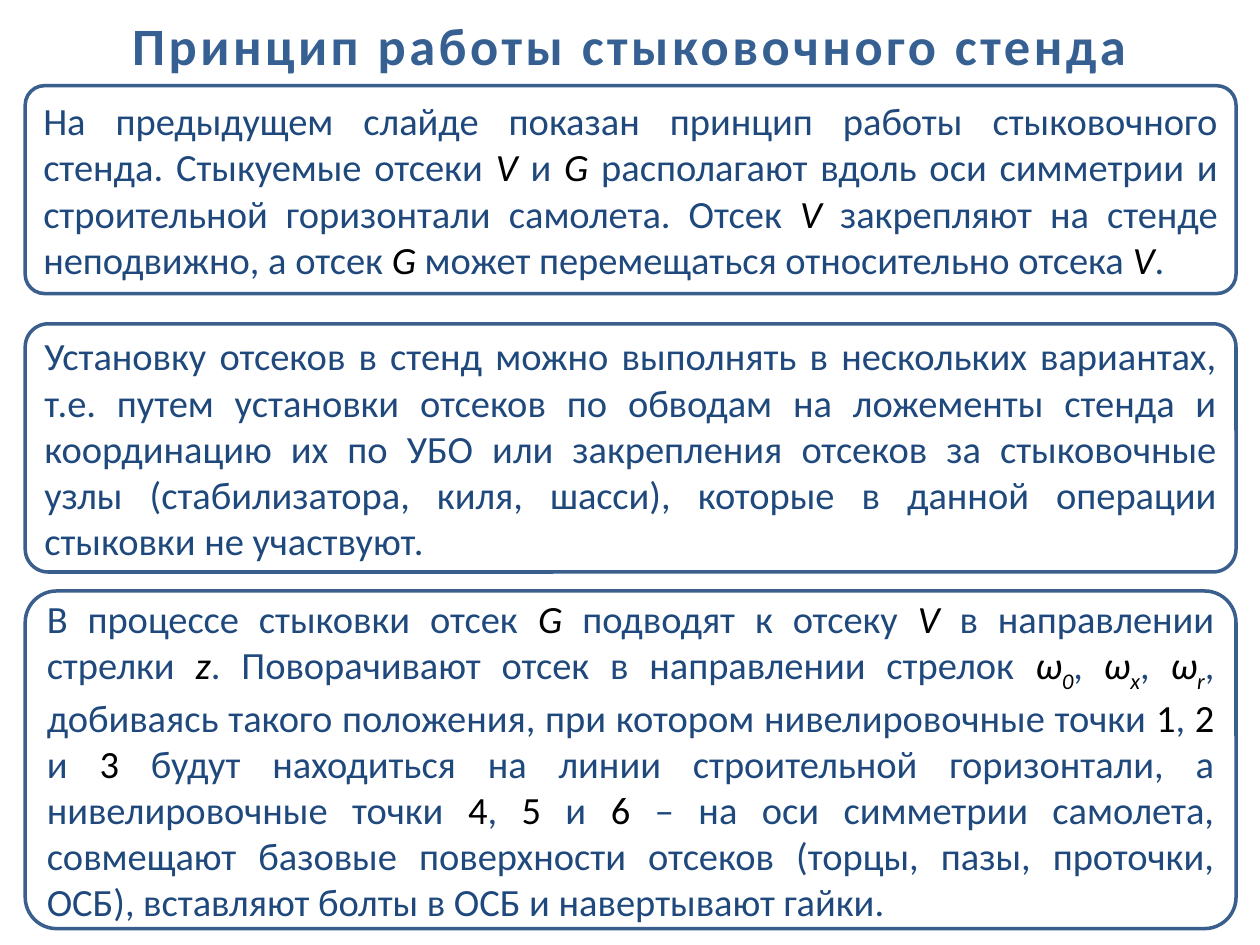
from dataclasses import dataclass

from pptx import Presentation
from pptx import util as u
from pptx.dml.color import RGBColor
from pptx.enum import shapes, text

PX = u.Inches(1) // 100


@dataclass(frozen=True)
class Theme:
    font: str = "Calibri"
    title_size: int = 30
    body_size: int = 22
    title: str = "376092"
    body: str = "1F497D"
    mark: str = "000000"
    border: str = "3A5F8C"


THEME = Theme()

# Run styles: colour, italic, baseline shift in thousandths of a percent
PLAIN = (THEME.body, False, 0)
NUMBER = (THEME.mark, False, 0)
SYMBOL = (THEME.mark, True, 0)
INDEX = (THEME.mark, True, -25000)

SETUP = [
    (PLAIN, "На предыдущем слайде показан принцип работы стыковочного стенда. "
            "Стыкуемые отсеки "),
    (SYMBOL, "V"), (PLAIN, " и "), (SYMBOL, "G"),
    (PLAIN, " располагают вдоль оси симметрии и строительной горизонтали "
            "самолета. Отсек "),
    (SYMBOL, "V"), (PLAIN, " закрепляют на стенде неподвижно, а отсек "),
    (SYMBOL, "G"), (PLAIN, " может перемещаться относительно отсека "),
    (SYMBOL, "V"), (PLAIN, "."),
]
MOUNTING = [
    (PLAIN, "Установку отсеков в стенд можно выполнять в нескольких вариантах, "
            "т.е. путем установки отсеков по обводам на ложементы стенда и "
            "координацию их по УБО или закрепления отсеков за стыковочные узлы "
            "(стабилизатора, киля, шасси), которые в данной операции стыковки "
            "не участвуют."),
]
DOCKING = [
    (PLAIN, "В процессе стыковки отсек "), (SYMBOL, "G"),
    (PLAIN, " подводят к отсеку "), (SYMBOL, "V"),
    (PLAIN, " в направлении стрелки "), (SYMBOL, "z"),
    (PLAIN, ". Поворачивают отсек в направлении стрелок "),
    (SYMBOL, "ω"), (INDEX, "0"), (PLAIN, ", "),
    (SYMBOL, "ω"), (INDEX, "х"), (PLAIN, ", "),
    (SYMBOL, "ω"), (INDEX, "r"),
    (PLAIN, ", добиваясь такого положения, при котором нивелировочные точки "),
    (NUMBER, "1"), (PLAIN, ", "), (NUMBER, "2"), (PLAIN, " и "), (NUMBER, "3"),
    (PLAIN, " будут находиться на линии строительной горизонтали, "
            "а нивелировочные точки "),
    (NUMBER, "4"), (PLAIN, ", "), (NUMBER, "5"), (PLAIN, " и "), (NUMBER, "6"),
    (PLAIN, " ‒ на оси симметрии самолета, совмещают базовые поверхности "
            "отсеков (торцы, пазы, проточки, ОСБ), вставляют болты в OСБ "
            "и навертывают гайки."),
]


def emu(box):
    return [u.Emu(length * PX) for length in box]


def add_span(para, words, size, color, bold=False, italic=False):
    span = para.add_run()
    span.text = words
    font = span.font
    font.name, font.size = THEME.font, u.Pt(size)
    font.bold, font.italic = bold, italic
    font.color.rgb = RGBColor.from_string(color)
    return span


def place_title(page, box, words):
    title = page.shapes.title
    title.left, title.top, title.width, title.height = emu(box)
    frame = title.text_frame
    frame.word_wrap = True
    frame.auto_size = text.MSO_AUTO_SIZE.NONE
    frame.vertical_anchor = text.MSO_ANCHOR.TOP
    para = frame.paragraphs[0]
    para.alignment = text.PP_ALIGN.CENTER
    span = add_span(para, words, THEME.title_size, THEME.title, bold=True)
    span.font._element.set("spc", "200")


def add_panel(page, box, runs):
    panel = page.shapes.add_shape(shapes.MSO_SHAPE.ROUNDED_RECTANGLE, *emu(box))
    panel.adjustments[0] = 0.093
    panel.shadow.inherit = False
    panel.fill.background()
    panel.line.color.rgb = RGBColor.from_string(THEME.border)
    panel.line.width = u.Pt(2)
    frame = panel.text_frame
    frame.word_wrap = True
    frame.vertical_anchor = text.MSO_ANCHOR.MIDDLE
    para = frame.paragraphs[0]
    para.alignment = text.PP_ALIGN.JUSTIFY
    para.space_after = u.Pt(6)
    for (color, italic, shift), words in runs:
        span = add_span(para, words, THEME.body_size, color, italic=italic)
        if shift:
            span.font._element.set("baseline", str(shift))


def main():
    deck = Presentation()
    deck.slide_width, deck.slide_height = emu((1000, 750))
    page = deck.slides.add_slide(deck.slide_layouts[5])
    panels = [(68, 165, SETUP), (257, 197, MOUNTING), (469, 268, DOCKING)]
    for top, height, runs in panels:
        add_panel(page, (20, top, 961, height), runs)
    place_title(page, (0, 5, 1000, 55), "Принцип работы стыковочного стенда")
    deck.save("out.pptx")


if __name__ == "__main__":
    main()
